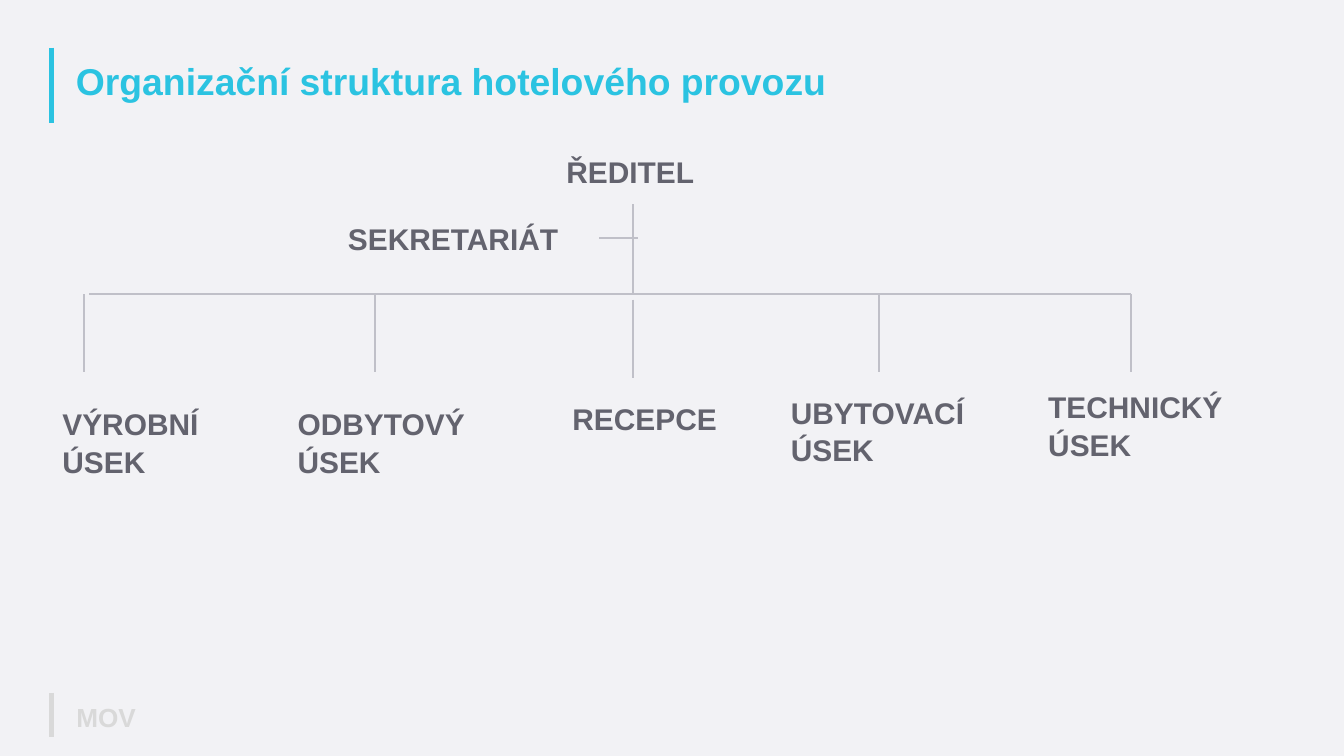
from pptx import Presentation
from pptx import util as u
from pptx.dml.color import RGBColor
from pptx.enum import shapes, text
from pptx.oxml.ns import qn
from lxml import etree

CYAN = RGBColor(0x2B, 0xC3, 0xE1)
DARK = RGBColor(0x63, 0x63, 0x6E)
RULE = RGBColor(0xC0, 0xC0, 0xC8)
PALE = RGBColor(0xD9, 0xD9, 0xD9)
PAPER = RGBColor(0xF2, 0xF2, 0xF5)


class ChartSlide:
    """Holds the style and the current slide."""
    font = "Arial"

    def __init__(self, deck):
        self.slide = deck.slides.add_slide(deck.slide_layouts[5])
        fill = self.slide.background.fill
        fill.solid()
        fill.fore_color.rgb = PAPER

    def set_words(self, frame, words, size, color, spacing):
        frame.text = words
        for para in frame.paragraphs:
            para.alignment = text.PP_ALIGN.LEFT
            para.line_spacing = spacing
            for span in para.runs:
                span.font.name = self.font
                span.font.size = u.Pt(size)
                span.font.bold = True
                span.font.color.rgb = color

    def title(self, words, left, top, width, height):
        box = self.slide.shapes.title
        box.left, box.top = u.Inches(left), u.Inches(top)
        box.width, box.height = u.Inches(width), u.Inches(height)
        box.text_frame.vertical_anchor = text.MSO_ANCHOR.MIDDLE
        self.set_words(box.text_frame, words, 40, CYAN, 0.9)

    def label(self, words, left, top, width, size=32, color=DARK):
        height = 0.1 + 0.54 * len(words.split("\n"))
        box = self.slide.shapes.add_textbox(
            u.Inches(left), u.Inches(top), u.Inches(width), u.Inches(height))
        box.text_frame.word_wrap = False
        self.set_words(box.text_frame, words, size, color, 1.05)

    def line(self, x1, y1, x2, y2, color=RULE, weight=2):
        line = self.slide.shapes.add_connector(
            shapes.MSO_CONNECTOR.STRAIGHT,
            u.Inches(x1), u.Inches(y1), u.Inches(x2), u.Inches(y2))
        line.line.color.rgb = color
        line.line.width = u.Pt(weight)
        etree.SubElement(line._element.spPr, qn("a:effectLst"))


def main():
    deck = Presentation()
    deck.slide_width, deck.slide_height = u.Inches(20), u.Inches(11.25)
    page = ChartSlide(deck)

    # Title and footer, each with an accent bar
    page.line(0.77, 0.71, 0.77, 1.83, CYAN, 5)
    page.line(0.77, 10.31, 0.77, 10.96, PALE, 5)
    page.title("Organizační struktura hotelového provozu", 1.03, 0.88, 18.05, 0.71)
    page.label("MOV", 1.04, 10.37, 1.2, 28, PALE)

    # Management
    page.label("ŘEDITEL", 8.33, 2.21, 2.12)
    page.label("SEKRETARIÁT", 5.08, 3.21, 3.36)

    # Trunk, crossbar and secretariat branch
    trunk, bar = 9.42, 4.38
    page.line(trunk, 3.04, trunk, bar)
    page.line(1.33, bar, 16.83, bar)
    page.line(8.92, 3.54, 9.5, 3.54)

    # Departments: words, left, top, width, branch x, branch top
    departments = [
        ("VÝROBNÍ\nÚSEK", 0.83, 5.96, 2.37, 1.25, bar),
        ("ODBYTOVÝ\nÚSEK", 4.33, 5.96, 2.81, 5.58, bar),
        ("RECEPCE", 8.42, 5.88, 2.37, trunk, bar + 0.08),
        ("UBYTOVACÍ\nÚSEK", 11.67, 5.79, 2.93, 13.08, bar),
        ("TECHNICKÝ\nÚSEK", 15.5, 5.71, 2.92, 16.83, bar),
    ]
    for words, left, top, width, branch, start in departments:
        page.label(words, left, top, width)
        page.line(branch, start, branch, start + 1.16)

    deck.save("out.pptx")


if __name__ == "__main__":
    main()
